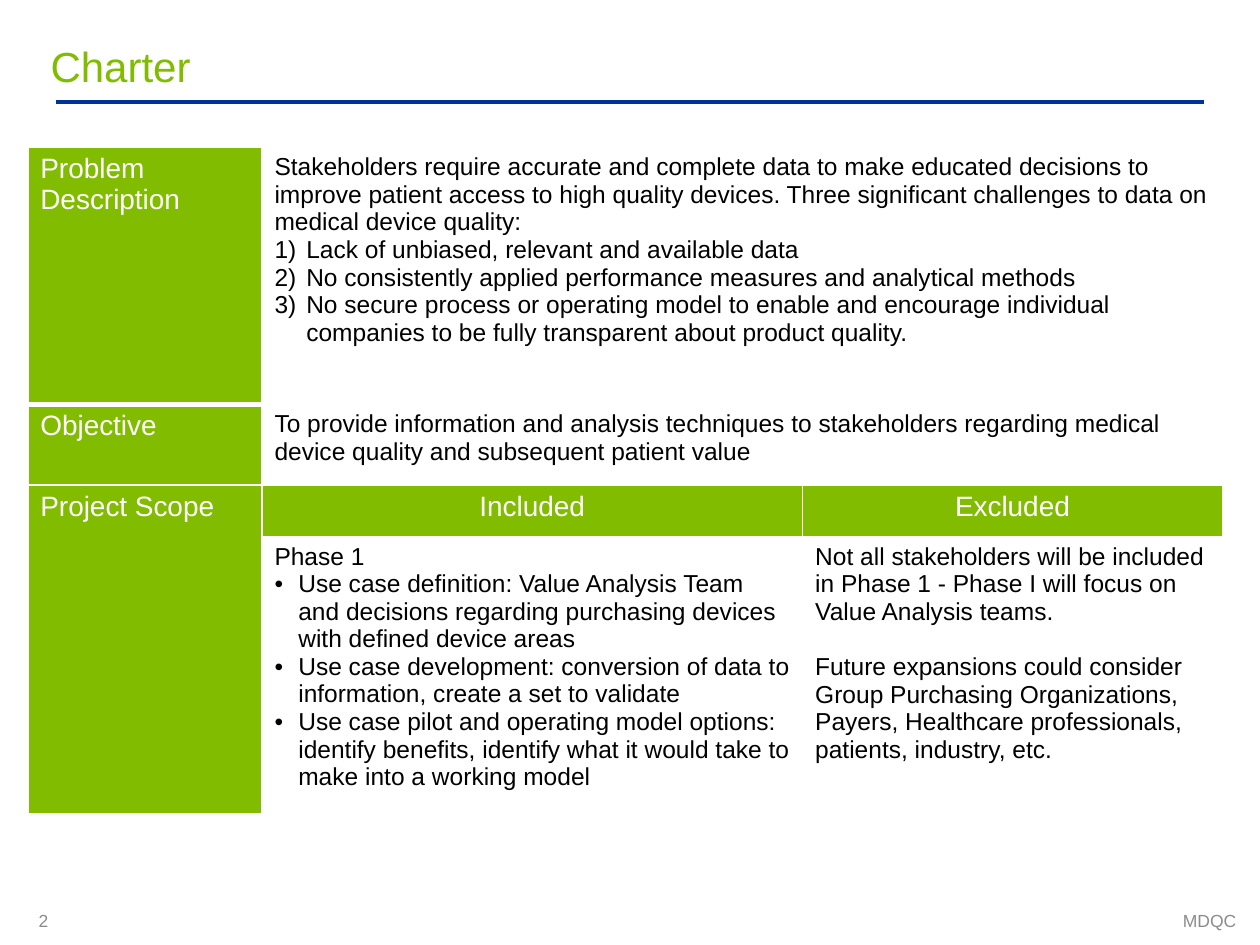
from lxml.etree import SubElement
from pptx import Presentation
from pptx.dml.color import RGBColor
from pptx.enum.shapes import MSO_CONNECTOR
from pptx.enum.text import MSO_ANCHOR, PP_ALIGN as ALIGN
from pptx.oxml.ns import qn
from pptx.util import Cm, Pt

GREEN, BLUE, GREY, WHITE, BLACK = "81BC00", "003399", "8C8C8C", "FFFFFF", "000000"


def color(hex_code):
    return RGBColor.from_string(hex_code)


def write(paragraph, text, size, hex_code, align=ALIGN.LEFT):
    paragraph.alignment = align
    run = paragraph.add_run()
    run.text = text
    run.font.name = "Arial"
    run.font.size = Pt(size)
    run.font.color.rgb = color(hex_code)


prs = Presentation()
prs.slide_width, prs.slide_height = Cm(25.4), Cm(19.05)
slide = prs.slides.add_slide(prs.slide_layouts[6])

# Title, page number and footer
for text, size, hex_code, align, anchor, box in [
    ("Charter", 24, GREEN, ALIGN.LEFT, MSO_ANCHOR.TOP, (1.02, 0.81, 23.37, 1.5)),
    ("2", 10, GREY, ALIGN.LEFT, MSO_ANCHOR.MIDDLE, (0.78, 18.21, 0.6, 0.69)),
    ("MDQC", 10, GREY, ALIGN.RIGHT, MSO_ANCHOR.MIDDLE, (17.35, 18.34, 7.57, 0.43)),
]:
    frame = slide.shapes.add_textbox(*map(Cm, box)).text_frame
    frame.word_wrap = True
    frame.vertical_anchor = anchor
    frame.margin_left = frame.margin_right = frame.margin_top = frame.margin_bottom = 0
    write(frame.paragraphs[0], text, size, hex_code, align)

# Rule under the title
rule = slide.shapes.add_connector(MSO_CONNECTOR.STRAIGHT, Cm(1.12), Cm(2.06), Cm(24.28), Cm(2.06))
rule.line.color.rgb = color(BLUE)
rule.line.width = Pt(2.25)
SubElement(rule._element.spPr, qn("a:effectLst"))

# Charter table
widths = [4.72, 10.9, 8.46]
heights = [5.18, 1.63, 1.04, 5.59]
charter = slide.shapes.add_table(
    4, 3, Cm(0.56), Cm(2.97), Cm(sum(widths)), Cm(sum(heights))).table
charter.first_row = charter.horz_banding = False
for column, width in zip(charter.columns, widths):
    column.width = Cm(width)
for row, height in zip(charter.rows, heights):
    row.height = Cm(height)

# White borders, thicker below the first row
for r in range(4):
    for c in range(3):
        props = charter.cell(r, c)._tc.get_or_add_tcPr()
        for side in "LRTB":
            thick = (r, side) in [(0, "B"), (1, "T")]
            border = SubElement(props, qn(f"a:ln{side}"), w=str(Pt(3 if thick else 1)))
            SubElement(SubElement(border, qn("a:solidFill")), qn("a:srgbClr"), val=WHITE)

charter.cell(0, 1).merge(charter.cell(0, 2))
charter.cell(1, 1).merge(charter.cell(1, 2))
charter.cell(2, 0).merge(charter.cell(3, 0))

# Green heading cells
for r, c, heading, align in [
    (0, 0, "Problem Description", ALIGN.LEFT),
    (1, 0, "Objective", ALIGN.LEFT),
    (2, 0, "Project Scope", ALIGN.LEFT),
    (2, 1, "Included", ALIGN.CENTER),
    (2, 2, "Excluded", ALIGN.CENTER),
]:
    cell = charter.cell(r, c)
    cell.fill.solid()
    cell.fill.fore_color.rgb = color(GREEN)
    write(cell.text_frame.paragraphs[0], heading, 16, WHITE, align)

# White body cells: list style, space before, text
problem = [
    ("", 0, "Stakeholders require accurate and complete data to make educated decisions to "
     "improve patient access to high quality devices. Three significant challenges to data "
     "on medical device quality:"),
    ("number", 0, "Lack of unbiased, relevant and available data"),
    ("number", 0, "No consistently applied performance measures and analytical methods"),
    ("number", 0, "No secure process or operating model to enable and encourage individual "
     "companies to be fully transparent about product quality."),
]
objective = [
    ("", 0, "To provide information and analysis techniques to stakeholders regarding medical "
     "device quality and subsequent patient value"),
]
included = [
    ("", 0, "Phase 1"),
    ("bullet", 0, "Use case definition: Value Analysis Team and decisions regarding "
     "purchasing devices with defined device areas"),
    ("bullet", 0, "Use case development: conversion of data to information, create a set "
     "to validate"),
    ("bullet", 0, "Use case pilot and operating model options: identify benefits, identify "
     "what it would take to make into a working model"),
]
excluded = [
    ("", 0, "Not all stakeholders will be included in Phase 1 - Phase I will focus on Value "
     "Analysis teams."),
    ("", 16, "Future expansions could consider Group Purchasing Organizations, Payers, "
     "Healthcare professionals, patients, industry, etc."),
]
list_styles = {
    "number": (0.64, "a:buAutoNum", {"type": "arabicParenR"}),
    "bullet": (0.48, "a:buChar", {"char": "•"}),
}
for r, c, body in [(0, 1, problem), (1, 1, objective), (3, 1, included), (3, 2, excluded)]:
    cell = charter.cell(r, c)
    cell.fill.solid()
    cell.fill.fore_color.rgb = color(WHITE)
    for i, (style, gap, text) in enumerate(body):
        frame = cell.text_frame
        paragraph = frame.add_paragraph() if i else frame.paragraphs[0]
        write(paragraph, text, 14, BLACK)
        if gap:
            paragraph.space_before = Pt(gap)
        if style:
            indent, tag, attributes = list_styles[style]
            props = paragraph._p.get_or_add_pPr()
            props.set("marL", str(Cm(indent)))
            props.set("indent", str(-Cm(indent)))
            SubElement(props, qn("a:buFont"), typeface="Arial")
            SubElement(props, qn(tag), attributes)

prs.save("out.pptx")
